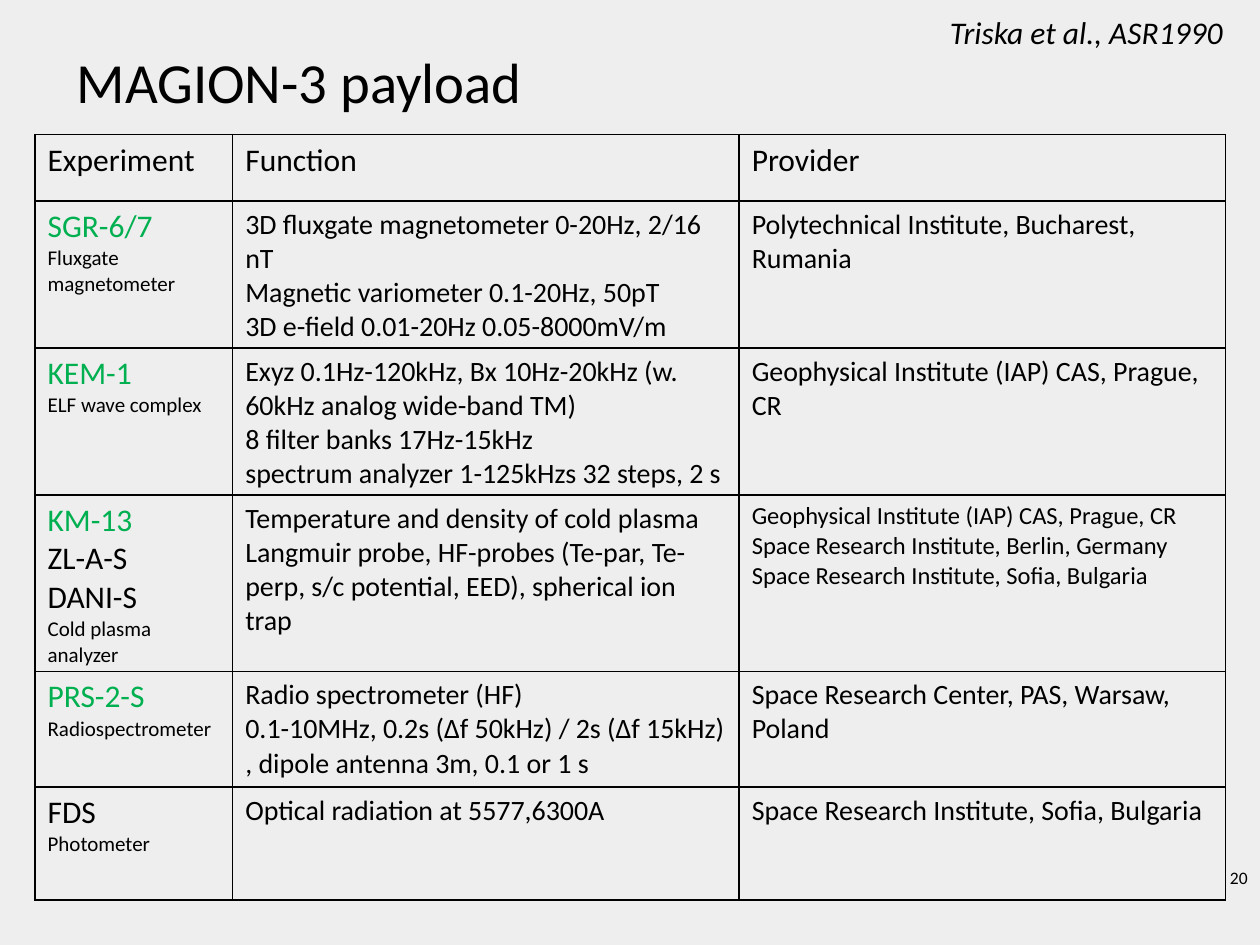
from typing import NamedTuple

from lxml import etree
from pptx import Presentation
from pptx import util as u
from pptx.dml import color
from pptx.enum import text
from pptx.oxml import ns

Pt = u.Pt
FONT = "Calibri"
BLACK, GREEN, GREY = "000000", "00B050", "EEEEEE"


class Line(NamedTuple):
    words: str
    size: float = 16
    ink: str = BLACK


class Row(NamedTuple):
    high: float
    names: list[Line]
    does: list[Line]
    owner: list[Line]


def rgb(code: str) -> color.RGBColor:
    return color.RGBColor.from_string(code)


def write(par, words: str, *, size: float, ink: str = BLACK,
          italic: bool = False, align=text.PP_ALIGN.LEFT) -> None:
    """Put one formatted run into a paragraph."""
    par.alignment = align
    run = par.add_run()
    run.text = words
    font = run.font
    font.name, font.size, font.italic = FONT, Pt(size), italic
    font.color.rgb = rgb(ink)


def label(slide, box: tuple, words: str, *, anchor=text.MSO_ANCHOR.TOP,
          **style) -> None:
    frame = slide.shapes.add_textbox(*map(Pt, box)).text_frame
    frame.word_wrap = True
    frame.vertical_anchor = anchor
    write(frame.paragraphs[0], words, **style)


def border(cell, width: float = 1) -> None:
    props = cell._tc.get_or_add_tcPr()
    for side in ("lnL", "lnR", "lnT", "lnB"):
        edge = etree.SubElement(props, ns.qn(f"a:{side}"), w=str(Pt(width)))
        fill = etree.SubElement(edge, ns.qn("a:solidFill"))
        etree.SubElement(fill, ns.qn("a:srgbClr"), val=BLACK)


def fill_cell(cell, lines: list[Line]) -> None:
    border(cell)
    cell.fill.background()
    frame = cell.text_frame
    for i, line in enumerate(lines):
        par = frame.add_paragraph() if i else frame.paragraphs[0]
        write(par, line.words, size=line.size, ink=line.ink)


def draw_table(slide, left: float, top: float, cols: list[float],
               rows: list[Row]) -> None:
    shape = slide.shapes.add_table(len(rows), len(cols), Pt(left), Pt(top),
                                   Pt(sum(cols)), Pt(sum(r.high for r in rows)))
    table = shape.table
    table.first_row = table.horz_banding = False
    for col, wide in zip(table.columns, cols):
        col.width = Pt(wide)
    for item, row in zip(table.rows, rows):
        item.height = Pt(row.high)
        for cell, lines in zip(item.cells, (row.names, row.does, row.owner)):
            fill_cell(cell, lines)


def code(words: str, ink: str = GREEN) -> Line:
    return Line(words, 18, ink)


def note(words: str) -> Line:
    return Line(words, 12)


ROWS = [
    Row(38, [code("Experiment", BLACK)], [code("Function", BLACK)],
        [code("Provider", BLACK)]),
    Row(68.4, [code("SGR-6/7"), note("Fluxgate magnetometer")],
        [Line("3D fluxgate magnetometer 0-20Hz, 2/16 nT"),
         Line("Magnetic variometer 0.1-20Hz, 50pT"),
         Line("3D e-field 0.01-20Hz 0.05-8000mV/m")],
        [Line("Polytechnical Institute, Bucharest, Rumania")]),
    Row(68.4, [code("KEM-1"), note("ELF wave complex")],
        [Line("Exyz 0.1Hz-120kHz, Bx 10Hz-20kHz (w. 60kHz analog wide-band TM)"),
         Line("8 filter banks 17Hz-15kHz"),
         Line("spectrum analyzer 1-125kHzs 32 steps, 2 s")],
        [Line("Geophysical Institute (IAP) CAS, Prague, CR")]),
    Row(68.4, [code("KM-13"), code("ZL-A-S", BLACK), code("DANI-S", BLACK),
               note("Cold plasma analyzer")],
        [Line("Temperature and density of cold plasma Langmuir probe, HF-probes "
              "(Te-par, Te-perp, s/c potential, EED), spherical ion trap")],
        [Line("Geophysical Institute (IAP) CAS, Prague, CR", 14),
         Line("Space Research Institute, Berlin, Germany", 14),
         Line("Space Research Institute, Sofia, Bulgaria", 14)]),
    Row(66, [code("PRS-2-S"), note("Radiospectrometer")],
        [Line("Radio spectrometer (HF)"),
         Line("0.1-10MHz, 0.2s (Δf 50kHz) / 2s (Δf 15kHz) , "
              "dipole antenna 3m, 0.1 or 1 s")],
        [Line("Space Research Center, PAS, Warsaw, Poland")]),
    Row(64.5, [code("FDS", BLACK), note("Photometer")],
        [Line("Optical radiation at 5577,6300A")],
        [Line("Space Research Institute, Sofia, Bulgaria")]),
]


def main() -> None:
    deck = Presentation()
    deck.slide_width, deck.slide_height = Pt(720), Pt(540)
    slide = deck.slides.add_slide(deck.slide_layouts[6])
    back = slide.background.fill
    back.solid()
    back.fore_color.rgb = rgb(GREY)

    # Title
    label(slide, (36.7, 26, 648, 43), "MAGION-3 payload", size=32.4,
          anchor=text.MSO_ANCHOR.BOTTOM)
    # Payload table
    draw_table(slide, 20, 77, [113, 289.4, 278], ROWS)
    # Source and page number
    label(slide, (535.7, 3.6, 180, 29), "Triska et al., ASR1990", size=18,
          italic=True)
    label(slide, (516, 492, 204, 48), "20", size=10,
          align=text.PP_ALIGN.RIGHT)

    deck.save("out.pptx")


if __name__ == "__main__":
    main()
